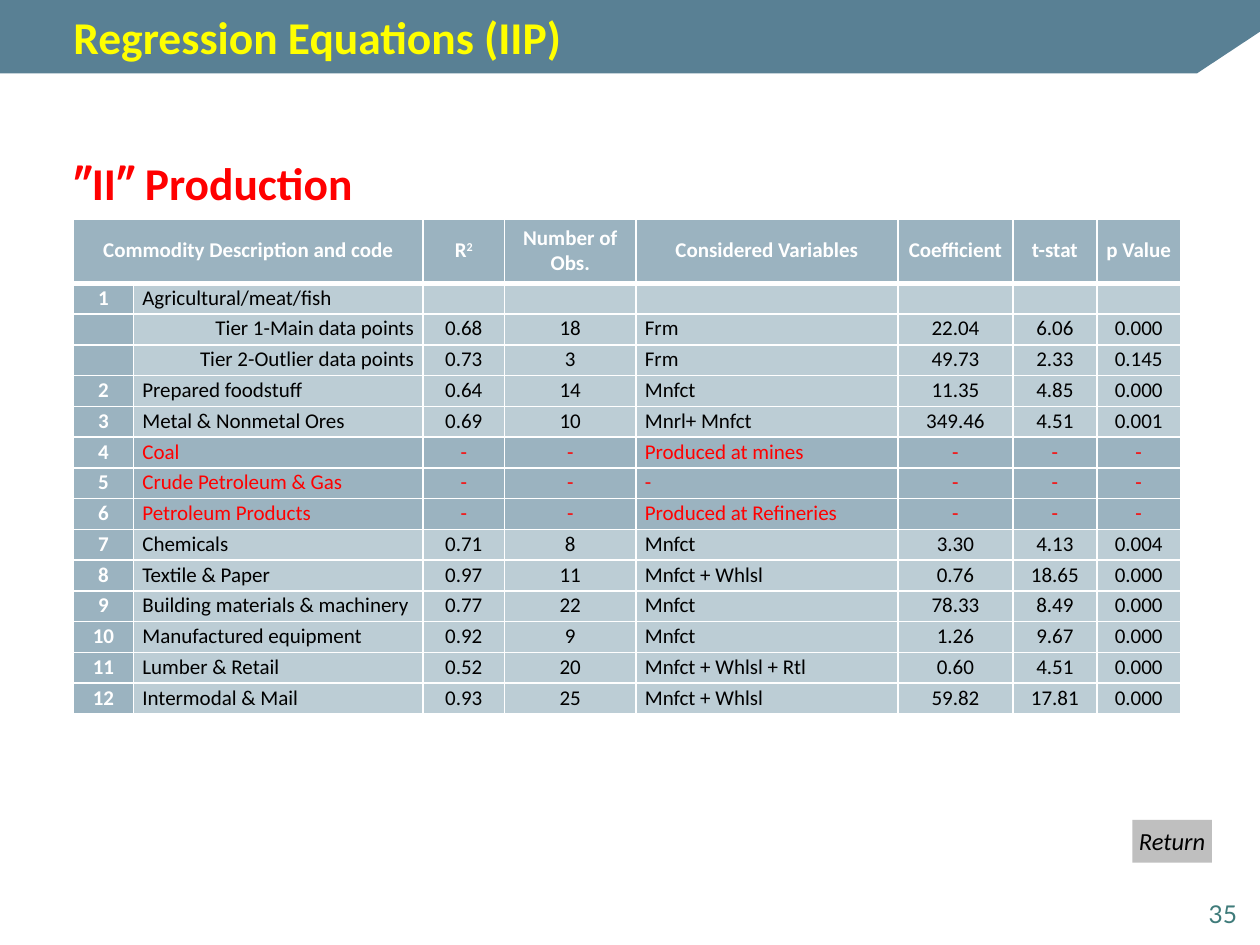
from lxml.etree import SubElement
from pptx import Presentation
from pptx.dml.color import RGBColor
from pptx.enum.shapes import MSO_SHAPE as SHAPE
from pptx.enum.text import MSO_ANCHOR as ANCHOR, PP_ALIGN as ALIGN
from pptx.oxml.ns import qn
from pptx.util import Cm, Pt

COLORS = {
    "band": "598094", "title": "FFFF00", "red": "FF0000", "white": "FFFFFF",
    "black": "000000", "dark": "9BB3C0", "light": "BCCDD5",
    "button": "BFBFBF", "number": "3F7B7A",
}
COLUMNS = [1.21, 5.84, 1.64, 2.65, 5.28, 2.32, 1.69, 1.69]
HEADER_HEIGHT, ROW_HEIGHT = 1.29, 0.62
HEADERS = ["Commodity Description and code", "", "R", "Number of Obs.",
           "Considered Variables", "Coefficient", "t-stat", "p Value"]
ROWS = [
    ["1", "Agricultural/meat/fish", "", "", "", "", "", ""],
    ["", "Tier 1-Main data points", "0.68", "18", "Frm", "22.04", "6.06", "0.000"],
    ["", "Tier 2-Outlier data points", "0.73", "3", "Frm", "49.73", "2.33", "0.145"],
    ["2", "Prepared foodstuff", "0.64", "14", "Mnfct", "11.35", "4.85", "0.000"],
    ["3", "Metal & Nonmetal Ores", "0.69", "10", "Mnrl+ Mnfct", "349.46", "4.51", "0.001"],
    ["4", "Coal", "-", "-", "Produced at mines", "-", "-", "-"],
    ["5", "Crude Petroleum & Gas", "-", "-", "-", "-", "-", "-"],
    ["6", "Petroleum Products", "-", "-", "Produced at Refineries", "-", "-", "-"],
    ["7", "Chemicals", "0.71", "8", "Mnfct", "3.30", "4.13", "0.004"],
    ["8", "Textile & Paper", "0.97", "11", "Mnfct + Whlsl", "0.76", "18.65", "0.000"],
    ["9", "Building materials & machinery", "0.77", "22", "Mnfct", "78.33", "8.49", "0.000"],
    ["10", "Manufactured equipment", "0.92", "9", "Mnfct", "1.26", "9.67", "0.000"],
    ["11", "Lumber & Retail", "0.52", "20", "Mnfct + Whlsl + Rtl", "0.60", "4.51", "0.000"],
    ["12", "Intermodal & Mail", "0.93", "25", "Mnfct + Whlsl", "59.82", "17.81", "0.000"],
]


def rgb(name):
    """Return the named colour."""
    return RGBColor.from_string(COLORS[name])


def add_text(p, text, size=12, font="Calibri", color="black", bold=False,
             italic=False, align=ALIGN.LEFT, raised=False):
    """Append a formatted run to a paragraph."""
    p.alignment = align
    r = p.add_run()
    r.text = text
    r.font.size, r.font.name = Pt(size), font
    r.font.bold, r.font.italic = bold, italic
    r.font.color.rgb = rgb(color)
    if raised:
        r.font._element.set("baseline", "30000")


def set_margins(box, left, top, right, bottom):
    """Set the four inner margins of a cell or text frame."""
    box.margin_left, box.margin_top = Cm(left), Cm(top)
    box.margin_right, box.margin_bottom = Cm(right), Cm(bottom)


def fill_shape(sp, color):
    """Give a shape a plain fill with no line or shadow."""
    sp.shadow.inherit = False
    sp.fill.solid()
    sp.fill.fore_color.rgb = rgb(color)
    sp.line.fill.background()


def add_label(s, text, x, y, w, h, left=0, right=0.25, anchor=ANCHOR.MIDDLE, **fmt):
    """Place a one-line text box."""
    tf = s.shapes.add_textbox(Cm(x), Cm(y), Cm(w), Cm(h)).text_frame
    tf.word_wrap = True
    tf.vertical_anchor = anchor
    set_margins(tf, left, 0.13, right, 0.13)
    add_text(tf.paragraphs[0], text, **fmt)


def add_title_band(s, x, y, w, h):
    """Draw the cut-corner band and its title."""
    points = [(w, 0), (w, 0.64), (w - 1.27, h), (0, h)]
    fb = s.shapes.build_freeform(Cm(x), Cm(y))
    fb.add_line_segments([(Cm(x + px), Cm(y + py)) for px, py in points])
    fill_shape(fb.convert_to_shape(), "band")
    add_label(s, "Regression Equations (IIP)", x + 1.48, y, w - 2.54, h,
              size=26, color="title", bold=True)


def set_borders(cell, top, bottom):
    """Draw white cell borders with the given top and bottom widths."""
    tc_pr = cell._tc.get_or_add_tcPr()
    for side, width in (("L", 1), ("R", 1), ("T", top), ("B", bottom)):
        ln = SubElement(tc_pr, qn(f"a:ln{side}"), w=str(Pt(width)))
        fill = SubElement(ln, qn("a:solidFill"))
        SubElement(fill, qn("a:srgbClr"), val=COLORS["white"])


def cell_format(row, col, values):
    """Return the fill, text colour, boldness and alignment of a cell."""
    excluded = values[2] == "-"
    strong = row == 0 or col == 0
    fill = "dark" if strong or excluded else "light"
    color = "white" if strong else "red" if excluded else "black"
    align = ALIGN.CENTER
    if row and col == 1:
        align = ALIGN.LEFT if values[0] else ALIGN.RIGHT
    elif row and col == 4:
        align = ALIGN.LEFT
    return fill, color, strong, align


def add_cell(cell, row, col, values):
    """Format one table cell and write its text."""
    fill, color, bold, align = cell_format(row, col, values)
    side = 0.13 if row == 0 and col else 0.18
    set_margins(cell, side, 0, side, 0)
    cell.vertical_anchor = ANCHOR.MIDDLE
    set_borders(cell, 3 if row == 1 else 1, 3 if row == 0 else 1)
    cell.fill.solid()
    cell.fill.fore_color.rgb = rgb(fill)
    p = cell.text_frame.paragraphs[0]
    p.line_spacing = Pt(14)
    if values[col]:
        add_text(p, values[col], color=color, bold=bold, align=align)
        if values[col] == "R":
            add_text(p, "2", color=color, bold=bold, align=align, raised=True)
    else:
        SubElement(p._p, qn("a:endParaRPr"), sz="1200")


def add_regression_table(s, x, y):
    """Build the table of regression results."""
    data = [HEADERS] + ROWS
    height = HEADER_HEIGHT + ROW_HEIGHT * len(ROWS)
    table = s.shapes.add_table(len(data), len(COLUMNS), Cm(x), Cm(y),
                               Cm(sum(COLUMNS)), Cm(height)).table
    table.first_row = table.horz_banding = False
    for column, width in zip(table.columns, COLUMNS):
        column.width = Cm(width)
    for i, values in enumerate(data):
        table.rows[i].height = Cm(ROW_HEIGHT if i else HEADER_HEIGHT)
        for j in range(len(COLUMNS)):
            add_cell(table.cell(i, j), i, j, values)
    table.cell(0, 0).merge(table.cell(0, 1))


def add_return_button(s, x, y, w, h):
    """Place the grey return button."""
    sp = s.shapes.add_shape(SHAPE.RECTANGLE, Cm(x), Cm(y), Cm(w), Cm(h))
    fill_shape(sp, "button")
    tf = sp.text_frame
    tf.word_wrap = False
    tf.vertical_anchor = ANCHOR.TOP
    set_margins(tf, 0.13, 0.13, 0.13, 0.13)
    add_text(tf.paragraphs[0], "Return", size=14, italic=True)


def main():
    """Build and save the slide."""
    prs = Presentation()
    prs.slide_width, prs.slide_height = Cm(25.4), Cm(19.05)
    s = prs.slides.add_slide(prs.slide_layouts[6])
    add_title_band(s, 0, 0, 25.4, 1.48)
    add_regression_table(s, 1.48, 4.42)
    add_label(s, "″II″ Production", 1.48, 2.95, 7.82, 1.47,
              size=26, color="red", bold=True)
    add_label(s, "35", 23.04, 17.58, 1.9, 1.27, left=0.25, right=0,
              anchor=ANCHOR.BOTTOM, size=14, font="Lato", color="number",
              align=ALIGN.RIGHT)
    add_return_button(s, 22.83, 16.53, 1.6, 0.86)
    prs.save("out.pptx")


if __name__ == "__main__":
    main()
